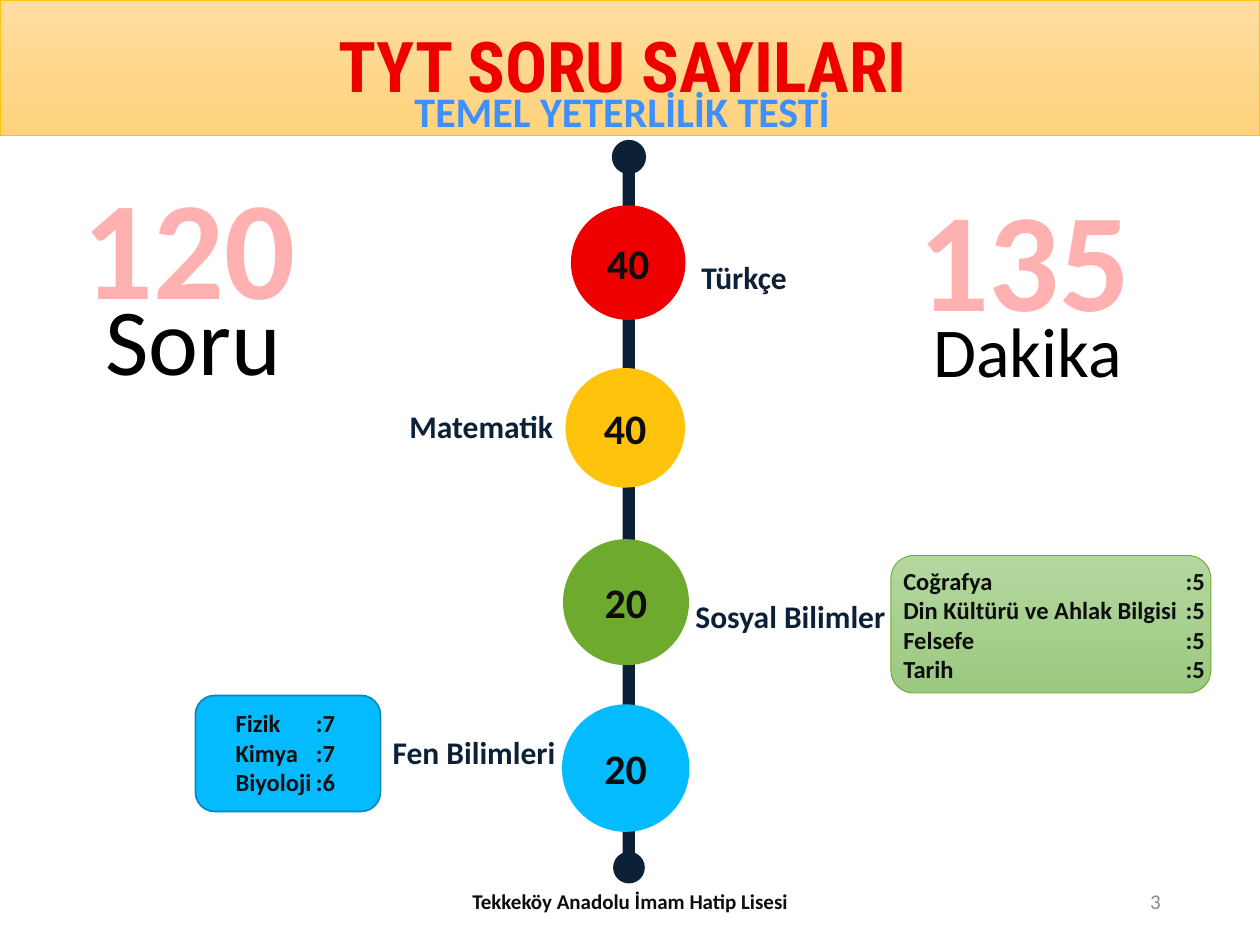
from pptx import Presentation
from pptx.dml.color import RGBColor
from pptx.enum.shapes import MSO_SHAPE
from pptx.enum.text import MSO_ANCHOR, MSO_AUTO_SIZE, PP_ALIGN
from pptx.util import Cm, Pt
from lxml.etree import SubElement
from pptx.oxml.ns import qn

NAVY = RGBColor(0x0C, 0x20, 0x36)
INK = RGBColor(0x0D, 0x0D, 0x0D)
BLACK = RGBColor(0, 0, 0)
GREY = RGBColor(0x8C, 0x8C, 0x8C)
RED = RGBColor(0xEF, 0, 0)
GOLD = RGBColor(0xFF, 0xC3, 0x0B)
GREEN = RGBColor(0x6D, 0xAA, 0x2D)
SKY = RGBColor(0x05, 0xBB, 0xFF)
TEAL = RGBColor(0x04, 0x8A, 0xBD)
BLUE = RGBColor(0x3F, 0x90, 0xFF)
PINK = RGBColor(0xFF, 0xB1, 0xB1)
SAND = [RGBColor(0xFF, 0xDD, 0x9F), RGBColor(0xFF, 0xD3, 0x7D)]
LEAF = [RGBColor(0xB4, 0xD7, 0xA0), RGBColor(0x9B, 0xC8, 0x7F)]
LEFT, MID, RIGHT = PP_ALIGN.LEFT, PP_ALIGN.CENTER, PP_ALIGN.RIGHT
TOP, CENTRE = MSO_ANCHOR.TOP, MSO_ANCHOR.MIDDLE

deck = Presentation()
deck.slide_width, deck.slide_height = Cm(25.4), Cm(19.05)
slide = deck.slides.add_slide(deck.slide_layouts[5])
shapes = slide.shapes


def draw(kind, box, fill, line=None, width=0.5):
    shape = shapes.add_shape(kind, *map(Cm, box))
    shape.shadow.inherit = False
    if isinstance(fill, list):
        shape.fill.gradient()
        shape.fill.gradient_angle = 270
        for stop, tone in zip(shape.fill.gradient_stops, fill):
            stop.color.rgb = tone
    else:
        shape.fill.solid()
        shape.fill.fore_color.rgb = fill
    if line:
        shape.line.color.rgb = line
        shape.line.width = Pt(width)
    else:
        shape.line.fill.background()
    return shape


def write(shape, text, size, color, align=LEFT, bold=True, anchor=TOP, face="Calibri"):
    frame = shape.text_frame
    frame.text = text
    frame.word_wrap = True
    frame.auto_size = MSO_AUTO_SIZE.NONE
    frame.vertical_anchor = anchor
    for para in frame.paragraphs:
        para.alignment = align
        para.font.size = Pt(size)
        para.font.name = face
        para.font.bold = bold
        para.font.color.rgb = color


band = draw(MSO_SHAPE.RECTANGLE, (0, 0, 25.4, 2.74), SAND, GOLD)
title = shapes.title
title.left, title.top, title.width, title.height = Cm(-0.15), Cm(0.33), Cm(25.4), Cm(3)
write(title, "TYT SORU SAYILARI", 40, RED, MID, face="Roboto Condensed")
band._element.addnext(title._element)

draw(MSO_SHAPE.RECTANGLE, (12.55, 3.4, 0.25, 13.82), NAVY)
for top, size in ((2.82, 0.69), (17.17, 0.64)):
    draw(MSO_SHAPE.OVAL, (12.68 - size / 2, top, size, size), NAVY)

for left, top, size, fill, count in (
    (11.51, 4.14, 2.31, RED, "40"),
    (11.4, 7.42, 2.41, GOLD, "40"),
    (11.35, 10.87, 2.54, GREEN, "20"),
    (11.33, 14.2, 2.57, SKY, "20"),
):
    disc = draw(MSO_SHAPE.OVAL, (left, top, size, size), fill)
    write(disc, count, 24, INK, MID, anchor=CENTRE)

draw(MSO_SHAPE.ROUNDED_RECTANGLE, (17.96, 11.2, 6.45, 2.77), LEAF, GREEN)
draw(MSO_SHAPE.ROUNDED_RECTANGLE, (3.94, 14.02, 3.73, 2.34), SKY, TEAL, 1)

for box, stop, rows in (
    ((17.96, 11.28, 6.68, 2.64), 5.69, (
        ("Coğrafya", 5), ("Din Kültürü ve Ahlak Bilgisi", 5), ("Felsefe", 5), ("Tarih", 5))),
    ((4.5, 14.15, 3.18, 2.06), 1.62, (("Fizik", 7), ("Kimya", 7), ("Biyoloji", 6))),
):
    table = shapes.add_textbox(*map(Cm, box))
    write(table, "\n".join(f"{name}\t:{count}" for name, count in rows), 14, INK)
    for para in table.text_frame.paragraphs:
        tabs = SubElement(para._p.get_or_add_pPr(), qn("a:tabLst"))
        para._p.pPr.insert(0, tabs)
        SubElement(tabs, qn("a:tab"), pos=str(Cm(stop)), algn="l")

for box, text, size, color, align, bold, anchor in (
    ((1.14, 1.6, 22.81, 1.27), "TEMEL YETERLİLİK TESTİ", 24, BLUE, MID, True, TOP),
    ((13.89, 5.08, 3, 1.02), "Türkçe", 18, NAVY, LEFT, True, TOP),
    ((1.14, 8.08, 10.26, 1.02), "Matematik", 18, NAVY, RIGHT, True, TOP),
    ((13.77, 11.91, 4.37, 1.02), "Sosyal Bilimler", 18, NAVY, LEFT, True, TOP),
    ((1.19, 14.66, 10.26, 1.02), "Fen Bilimleri", 18, NAVY, RIGHT, True, TOP),
    ((1.42, 3.1, 6.23, 3.68), "120", 80, PINK, LEFT, True, TOP),
    ((1.88, 5.54, 4.27, 2.57), "Soru", 54, BLACK, LEFT, False, TOP),
    ((18.26, 3.33, 6.63, 3.68), "135", 80, PINK, LEFT, True, TOP),
    ((18.57, 6.07, 4.98, 1.96), "Dakika", 40, BLACK, LEFT, False, TOP),
    ((8.41, 17.65, 8.59, 1.02), "Tekkeköy Anadolu İmam Hatip Lisesi", 12, INK, MID, True, CENTRE),
    ((17.93, 17.65, 5.72, 1.02), "3", 12, GREY, RIGHT, False, CENTRE),
):
    write(shapes.add_textbox(*map(Cm, box)), text, size, color, align, bold, anchor)

deck.save("out.pptx")
